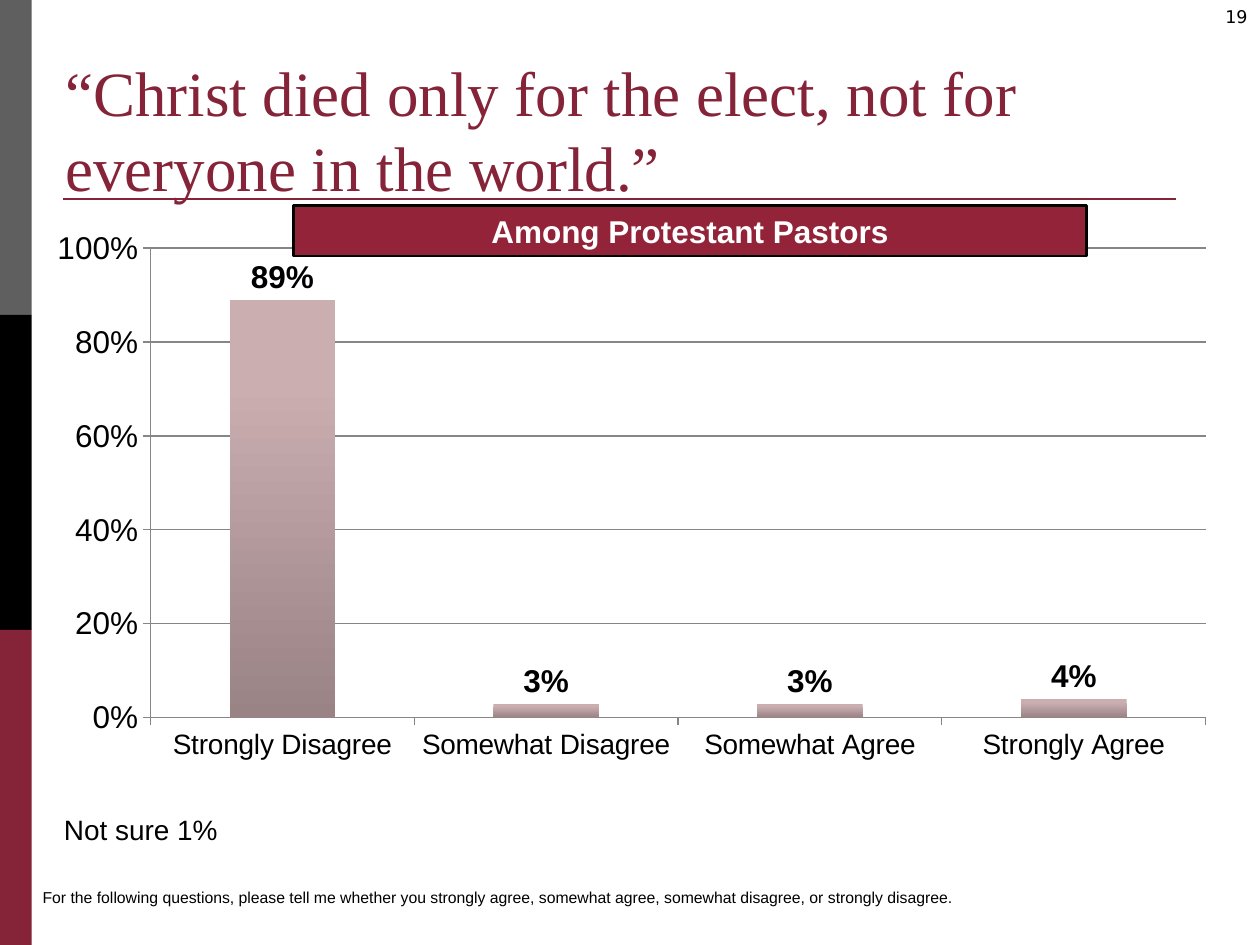
from dataclasses import dataclass

import lxml.etree
import pptx
import pptx.chart.data
import pptx.dml.color
import pptx.enum.chart
import pptx.enum.shapes
import pptx.enum.text
import pptx.oxml
import pptx.oxml.ns
import pptx.util

Cm = pptx.util.Cm
Pt = pptx.util.Pt
RGB = pptx.dml.color.RGBColor
Align = pptx.enum.text.PP_ALIGN
Anchor = pptx.enum.text.MSO_ANCHOR


@dataclass(frozen=True)
class Theme:
    maroon: RGB = RGB(0x85, 0x23, 0x38)
    banner: RGB = RGB(0x92, 0x23, 0x39)
    gray: RGB = RGB(0x5F, 0x5F, 0x5F)
    black: RGB = RGB(0, 0, 0)
    white: RGB = RGB(0xFF, 0xFF, 0xFF)
    grid: RGB = RGB(0x86, 0x86, 0x86)
    bar_top: RGB = RGB(0xCA, 0xAE, 0xB0)
    bar_bottom: RGB = RGB(0x99, 0x83, 0x85)
    sans: str = "Arial"
    serif: str = "Times New Roman"
    number_font: str = "DejaVu Sans"
    title_size: int = 36
    label_size: int = 18
    body_size: int = 16
    number_size: int = 10
    note_size: int = 9


THEME = Theme()


@dataclass(frozen=True)
class Box:
    """Position and size in centimetres."""
    left: float
    top: float
    width: float
    height: float

    def lengths(self) -> tuple:
        return Cm(self.left), Cm(self.top), Cm(self.width), Cm(self.height)


@dataclass(frozen=True)
class Label:
    text: str
    box: Box
    size: int
    font: str = THEME.sans
    color: RGB = THEME.black
    bold: bool = False
    align: Align = Align.LEFT
    anchor: Anchor = Anchor.TOP


@dataclass(frozen=True)
class Answer:
    name: str
    share: float


ANSWERS = [
    Answer("Strongly Disagree", 0.89),
    Answer("Somewhat Disagree", 0.03),
    Answer("Somewhat Agree", 0.03),
    Answer("Strongly Agree", 0.04),
]

LABELS = [
    Label("19", Box(24.13, 0, 1.27, 0.84), THEME.number_size,
          font=THEME.number_font, align=Align.RIGHT),
    Label("“Christ died only for the elect, not for everyone in the world.”",
          Box(1.07, 0.69, 23.77, 3.56), THEME.title_size,
          font=THEME.serif, color=THEME.maroon, anchor=Anchor.BOTTOM),
    Label("For the following questions, please tell me whether you strongly agree, "
          "somewhat agree, somewhat disagree, or strongly disagree.",
          Box(0.61, 17.78, 19.46, 0.64), THEME.note_size),
    Label("Not sure 1%", Box(1.04, 16.26, 4.47, 0.94), THEME.body_size),
]

BANNER = Label("Among Protestant Pastors", Box(5.92, 4.14, 15.98, 1.02),
               THEME.label_size, color=THEME.white, bold=True,
               align=Align.CENTER, anchor=Anchor.MIDDLE)


def style_font(font, size: int, name: str = THEME.sans,
               color: RGB = THEME.black, bold: bool = False) -> None:
    font.size, font.name, font.bold = Pt(size), name, bold
    font.color.rgb = color


def write_label(shape, label: Label) -> None:
    frame = shape.text_frame
    frame.word_wrap = True
    frame.vertical_anchor = label.anchor
    frame.text = label.text
    paragraph = frame.paragraphs[0]
    paragraph.alignment = label.align
    style_font(paragraph.font, label.size, label.font, label.color, label.bold)


def add_rectangle(slide, box: Box, fill: RGB):
    rectangle = slide.shapes.add_shape(
        pptx.enum.shapes.MSO_SHAPE.RECTANGLE, *box.lengths())
    rectangle.shadow.inherit = False
    rectangle.fill.solid()
    rectangle.fill.fore_color.rgb = fill
    rectangle.line.fill.background()
    return rectangle


def add_side_bands(slide) -> None:
    height = 6.35
    for index, color in enumerate((THEME.gray, THEME.black, THEME.maroon)):
        add_rectangle(slide, Box(0, index * height, 0.64, height), color)


def add_title_rule(slide) -> None:
    rule = slide.shapes.add_connector(
        pptx.enum.shapes.MSO_CONNECTOR.STRAIGHT,
        Cm(1.27), Cm(4.01), Cm(23.7), Cm(4.01))
    rule.line.color.rgb = THEME.maroon
    rule.line.width = Pt(1.5)
    lxml.etree.SubElement(rule._element.spPr, pptx.oxml.ns.qn("a:effectLst"))


def set_plot_area(chart, x: float, y: float, w: float, h: float) -> None:
    """Fix the inner plot area, in fractions of the chart."""
    plot_area = chart._chartSpace.chart.plotArea
    for automatic in plot_area.findall(pptx.oxml.ns.qn("c:layout")):
        plot_area.remove(automatic)
    parts = [("layoutTarget", "inner"), ("xMode", "edge"), ("yMode", "edge"),
             ("x", x), ("y", y), ("w", w), ("h", h)]
    settings = "".join(f'<c:{tag} val="{value}"/>' for tag, value in parts)
    plot_area.insert(0, pptx.oxml.parse_xml(
        f'<c:layout {pptx.oxml.ns.nsdecls("c")}>'
        f"<c:manualLayout>{settings}</c:manualLayout></c:layout>"))


def style_axis(axis, size: int) -> None:
    axis.major_tick_mark = pptx.enum.chart.XL_TICK_MARK.OUTSIDE
    axis.format.line.color.rgb = THEME.grid
    style_font(axis.tick_labels.font, size)


def add_answer_chart(slide, box: Box) -> None:
    data = pptx.chart.data.CategoryChartData(number_format="0%")
    data.categories = [answer.name for answer in ANSWERS]
    data.add_series("Series 1", [answer.share for answer in ANSWERS])
    chart = slide.shapes.add_chart(
        pptx.enum.chart.XL_CHART_TYPE.COLUMN_CLUSTERED, *box.lengths(), data).chart
    chart.has_legend = chart.has_title = False
    style_font(chart.font, THEME.label_size)
    set_plot_area(chart, 0.095, 0.054, 0.889, 0.807)

    style_axis(chart.category_axis, THEME.body_size)
    shares = chart.value_axis
    style_axis(shares, THEME.label_size)
    shares.minimum_scale, shares.maximum_scale, shares.major_unit = 0, 1, 0.2
    shares.major_gridlines.format.line.color.rgb = THEME.grid
    shares.tick_labels.number_format = "0%"
    shares.tick_labels.number_format_is_linked = False

    plot = chart.plots[0]
    plot.gap_width = 150
    plot.vary_by_categories = False
    fill = plot.series[0].format.fill
    fill.gradient()
    fill.gradient_angle = 270
    top, bottom = fill.gradient_stops
    top.color.rgb, top.position = THEME.bar_top, 0.2
    bottom.color.rgb, bottom.position = THEME.bar_bottom, 1

    plot.has_data_labels = True
    labels = plot.data_labels
    labels.show_value = True
    labels.number_format = "0%"
    labels.number_format_is_linked = False
    labels.position = pptx.enum.chart.XL_LABEL_POSITION.OUTSIDE_END
    style_font(labels.font, THEME.label_size, bold=True)


def add_banner(slide) -> None:
    banner = add_rectangle(slide, BANNER.box, THEME.banner)
    banner.line.color.rgb = THEME.black
    banner.line.width = Pt(1.5)
    write_label(banner, BANNER)


def main() -> None:
    deck = pptx.Presentation()
    deck.slide_width, deck.slide_height = Cm(25.4), Cm(19.05)
    slide = deck.slides.add_slide(deck.slide_layouts[6])
    add_side_bands(slide)
    add_title_rule(slide)
    for label in LABELS:
        write_label(slide.shapes.add_textbox(*label.box.lengths()), label)
    add_answer_chart(slide, Box(0.76, 4.37, 23.93, 11.73))
    add_banner(slide)
    deck.save("out.pptx")


if __name__ == "__main__":
    main()
